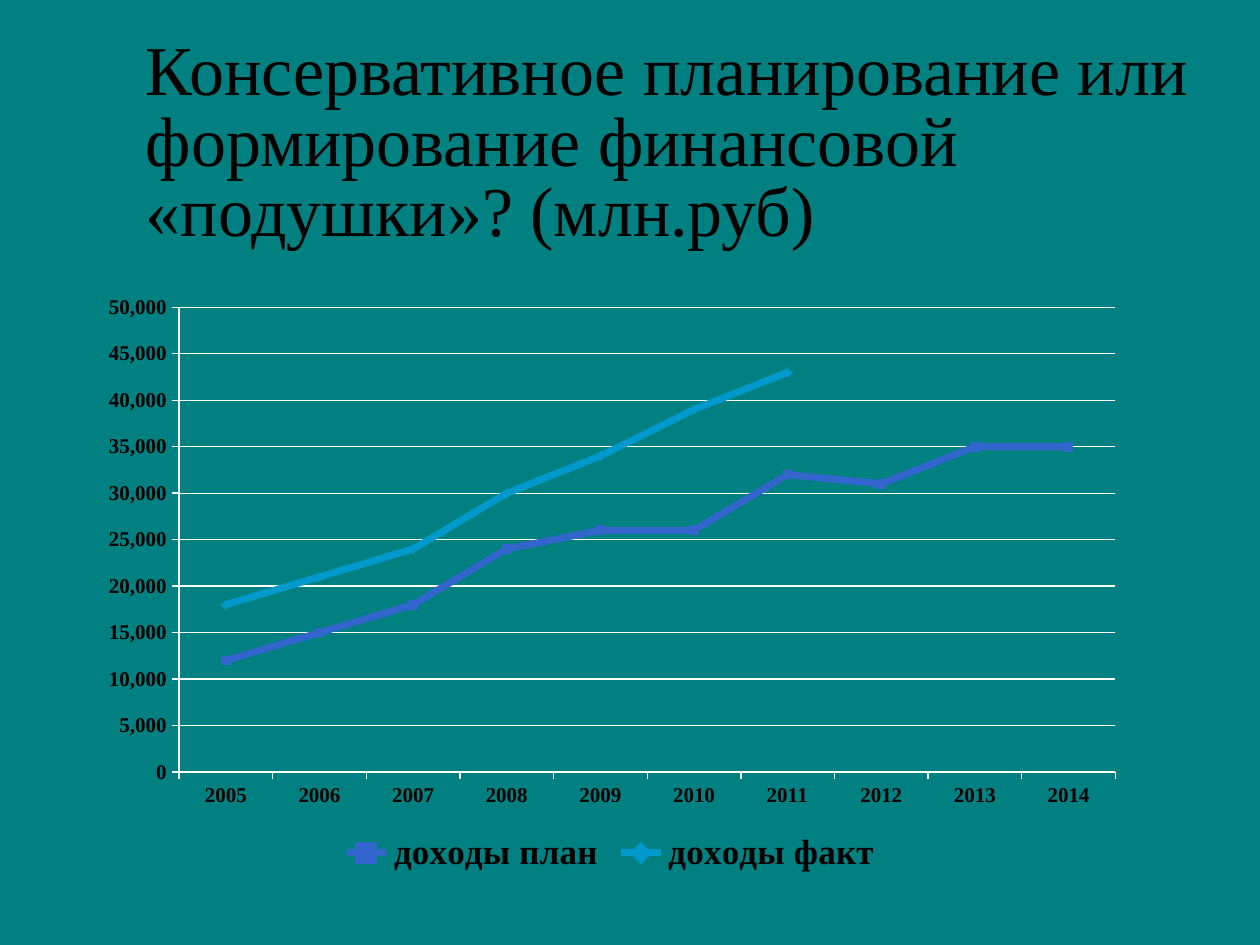
from dataclasses import dataclass
from typing import Optional

from lxml import etree
from pptx import Presentation
from pptx.chart.data import CategoryChartData
from pptx.dml.color import RGBColor
from pptx.enum.chart import (XL_CHART_TYPE, XL_LEGEND_POSITION,
                             XL_MARKER_STYLE, XL_TICK_MARK)
from pptx.enum.text import MSO_ANCHOR
from pptx.oxml.ns import qn
from pptx.util import Inches, Pt

LINE = XL_CHART_TYPE.LINE_MARKERS
BOTTOM = XL_LEGEND_POSITION.BOTTOM
OUTSIDE = XL_TICK_MARK.OUTSIDE
SQUARE = XL_MARKER_STYLE.SQUARE
DIAMOND = XL_MARKER_STYLE.DIAMOND

TEAL = RGBColor(0x00, 0x80, 0x80)
BLACK = RGBColor(0x00, 0x00, 0x00)
WHITE = RGBColor(0xFF, 0xFF, 0xFF)
BLUE = RGBColor(0x33, 0x66, 0xCC)
AZURE = RGBColor(0x00, 0x99, 0xCC)
FACE = "Times New Roman"
WIDE, HIGH = Inches(10), Inches(7.5)
TITLE = "Консервативное планирование или формирование финансовой «подушки»? (млн.руб)"
YEARS = [str(year) for year in range(2005, 2015)]


@dataclass
class Box:
    """Left, top, width and height in inches."""
    x: float
    y: float
    w: float
    h: float

    def place(self) -> tuple:
        return tuple(Inches(n) for n in (self.x, self.y, self.w, self.h))


@dataclass
class Income:
    name: str
    sums: list[Optional[int]]
    color: RGBColor
    mark: XL_MARKER_STYLE


INCOMES = [
    Income("доходы план", [12000, 15000, 18000, 24000, 26000,
                           26000, 32000, 31000, 35000, 35000], BLUE, SQUARE),
    Income("доходы факт", [18000, 21000, 24000, 30000, 34000,
                           39000, 43000, None, None, None], AZURE, DIAMOND),
]


def style(font, size: float, color: RGBColor, bold: bool = False) -> None:
    font.name, font.size, font.bold = FACE, Pt(size), bold
    font.color.rgb = color


def add_title(slide, box: Box) -> None:
    frame = slide.shapes.add_textbox(*box.place()).text_frame
    frame.word_wrap = True
    frame.vertical_anchor = MSO_ANCHOR.BOTTOM
    para = frame.paragraphs[0]
    para.line_spacing = 0.84
    run = para.add_run()
    run.text = TITLE
    style(run.font, 40, BLACK)


def set_plot(chart, area: Box) -> None:
    """Fix the inner plot area, given as shares of the chart."""
    plot = chart.plots[0]._element.getparent()
    for old in plot.findall(qn("c:layout")):
        plot.remove(old)
    layout = etree.Element(qn("c:layout"))
    plot.insert(0, layout)
    manual = etree.SubElement(layout, qn("c:manualLayout"))
    rules = {"layoutTarget": "inner", "xMode": "edge", "yMode": "edge",
             "x": area.x, "y": area.y, "w": area.w, "h": area.h}
    for tag, val in rules.items():
        etree.SubElement(manual, qn(f"c:{tag}")).set("val", str(val))


def style_axis(axis) -> None:
    axis.major_tick_mark = OUTSIDE
    axis.format.line.color.rgb = WHITE
    axis.format.line.width = Pt(0.75)
    style(axis.tick_labels.font, 12, BLACK, True)


def add_chart(slide, box: Box) -> None:
    data = CategoryChartData(number_format="#,##0")
    data.categories = YEARS
    for income in INCOMES:
        data.add_series(income.name, income.sums)
    chart = slide.shapes.add_chart(LINE, *box.place(), data).chart
    chart.has_title = False
    style(chart.font, 10, WHITE)
    set_plot(chart, Box(0.09, 0.04, 0.89, 0.78))

    for axis in (chart.category_axis, chart.value_axis):
        style_axis(axis)
    scale = chart.value_axis
    scale.minimum_scale, scale.maximum_scale = 0, 50000
    scale.major_unit = 5000
    scale.tick_labels.number_format = "#,##0"
    scale.tick_labels.number_format_is_linked = False
    grid = scale.major_gridlines.format.line
    grid.color.rgb, grid.width = WHITE, Pt(0.75)

    chart.has_legend = True
    chart.legend.position = BOTTOM
    chart.legend.include_in_layout = False
    style(chart.legend.font, 20, BLACK, True)

    chart.plots[0].vary_by_categories = False
    for series, income in zip(chart.plots[0].series, INCOMES):
        series.smooth = False
        series.format.line.color.rgb = income.color
        series.format.line.width = Pt(4)
        series.marker.style, series.marker.size = income.mark, 5
        look = series.marker.format
        look.fill.solid()
        look.fill.fore_color.rgb = income.color
        look.line.color.rgb = income.color


def main() -> None:
    deck = Presentation()
    deck.slide_width, deck.slide_height = WIDE, HIGH
    slide = deck.slides.add_slide(deck.slide_layouts[6])
    fill = slide.background.fill
    fill.solid()
    fill.fore_color.rgb = TEAL
    add_title(slide, Box(1.06, 0.76, 8.58, 1.28))
    add_chart(slide, Box(0.67, 2.25, 8.35, 4.73))
    deck.save("out.pptx")


if __name__ == "__main__":
    main()
